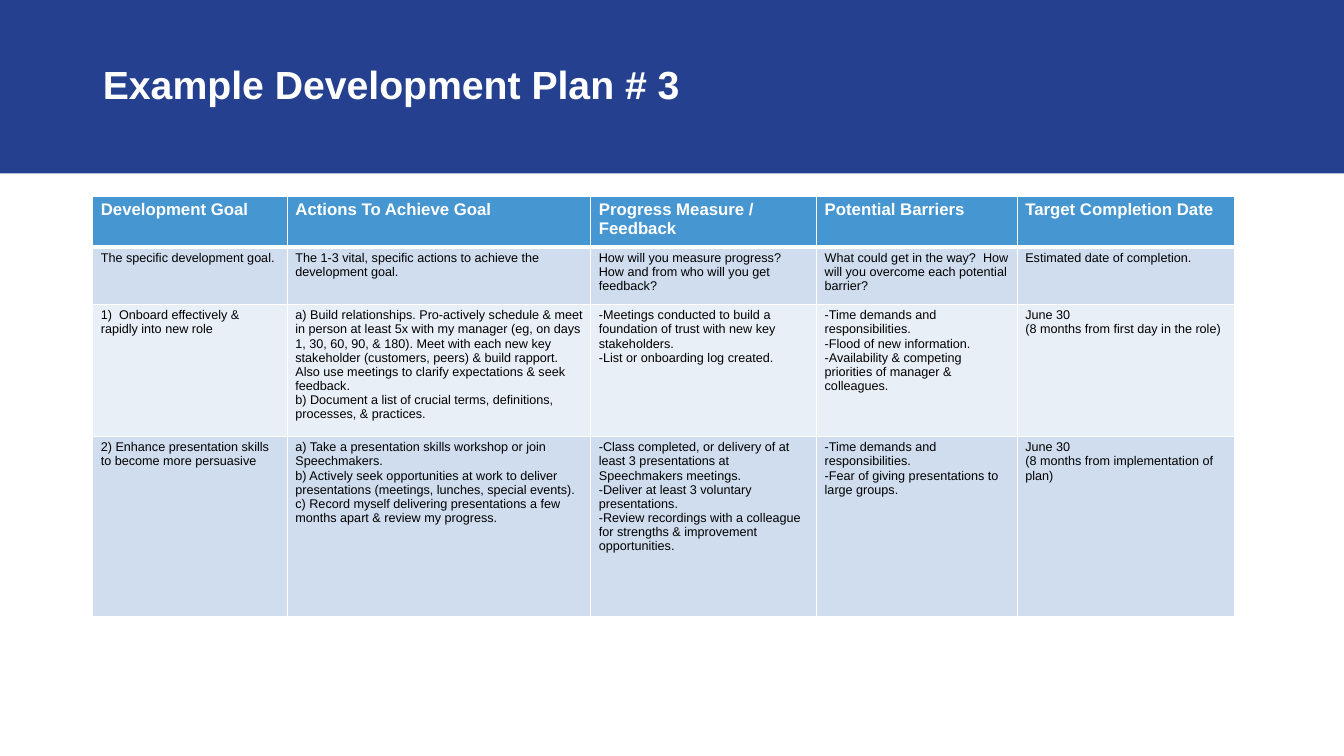
"""Build the slide with an example development plan table."""
from dataclasses import dataclass

from lxml import etree
from pptx import Presentation
from pptx.dml.color import RGBColor
from pptx.enum.shapes import MSO_SHAPE
from pptx.enum.text import MSO_ANCHOR, PP_ALIGN
from pptx.oxml.ns import qn
from pptx.util import Inches, Pt

RECT = MSO_SHAPE.RECTANGLE
MIDDLE = MSO_ANCHOR.MIDDLE
LEFT = PP_ALIGN.LEFT
FONT = "Arial"
WHITE, BLACK, NAVY = "FFFFFF", "000000", "25408F"
HEADER, BAND, PALE = "4696D2", "CFDDEE", "E9EFF7"
COLUMN_WIDTHS = (1.93, 3.01, 2.24, 1.99, 2.16)


@dataclass
class PlanRow:
    height: float
    fill: str
    cells: tuple[str, ...]
    size: float = 9
    color: str = BLACK
    bold: bool = False
    bottom_line: float = 1


PLAN = (
    PlanRow(0.5, HEADER, (
        "Development Goal",
        "Actions To Achieve Goal",
        "Progress Measure / Feedback",
        "Potential Barriers",
        "Target Completion Date",
    ), size=12, color=WHITE, bold=True, bottom_line=3),
    PlanRow(0.57, BAND, (
        "The specific development goal.",
        "The 1-3 vital, specific actions to achieve the development goal.",
        "How will you measure progress? How and from who will you get feedback?",
        "What could get in the way?  How will you overcome each potential barrier?",
        "Estimated date of completion.",
    )),
    PlanRow(1.31, PALE, (
        "1)  Onboard effectively & rapidly into new role",
        "a) Build relationships. Pro-actively schedule & meet in person at least 5x "
        "with my manager (eg, on days 1, 30, 60, 90, & 180). Meet with each new key "
        "stakeholder (customers, peers) & build rapport. Also use meetings to clarify "
        "expectations & seek feedback.\n"
        "b) Document a list of crucial terms, definitions, processes, & practices.",
        "-Meetings conducted to build a foundation of trust with new key stakeholders.\n"
        "-List or onboarding log created.",
        "-Time demands and responsibilities.\n"
        "-Flood of new information.\n"
        "-Availability & competing priorities of manager & colleagues.",
        "June 30\n(8 months from first day in the role)",
    )),
    PlanRow(1.79, BAND, (
        "2) Enhance presentation skills to become more persuasive",
        "a) Take a presentation skills workshop or join Speechmakers.\n"
        "b) Actively seek opportunities at work to deliver presentations "
        "(meetings, lunches, special events).\n"
        "c) Record myself delivering presentations a few months apart & review "
        "my progress.",
        "-Class completed, or delivery of at least 3 presentations at Speechmakers "
        "meetings.\n"
        "-Deliver at least 3 voluntary presentations.\n"
        "-Review recordings with a colleague for strengths & improvement opportunities.",
        "-Time demands and responsibilities.\n"
        "-Fear of giving presentations to large groups.",
        "June 30\n(8 months from implementation of plan)",
    )),
)


def rgb(value: str) -> RGBColor:
    return RGBColor.from_string(value)


def format_text(tf, size: float, color: str, bold: bool) -> None:
    for p in tf.paragraphs:
        p.alignment = LEFT
        for r in p.runs:
            r.font.name = FONT
            r.font.size = Pt(size)
            r.font.bold = bold
            r.font.color.rgb = rgb(color)


def add_borders(cell, bottom: float, top: float) -> None:
    tc_pr = cell._tc.get_or_add_tcPr()
    for side, width in (("L", 1), ("R", 1), ("T", top), ("B", bottom)):
        ln = etree.SubElement(tc_pr, qn(f"a:ln{side}"), w=str(Pt(width)))
        fill = etree.SubElement(ln, qn("a:solidFill"))
        etree.SubElement(fill, qn("a:srgbClr"), val=WHITE)


def add_title(s, text: str) -> None:
    title = s.shapes.title
    title.left, title.top = Inches(0.92), Inches(0.22)
    title.width, title.height = Inches(11.31), Inches(1.28)
    tf = title.text_frame
    tf.text = text
    tf.word_wrap = True
    tf.vertical_anchor = MIDDLE
    tf.paragraphs[0].line_spacing = 0.9
    format_text(tf, 28, WHITE, True)


def add_title_band(s, width: int) -> None:
    band = s.shapes.add_shape(RECT, 0, 0, width, Inches(1.72))
    band.shadow.inherit = False
    band.fill.solid()
    band.fill.fore_color.rgb = rgb(NAVY)
    band.line.fill.background()
    s.shapes.title._element.addprevious(band._element)


def add_plan(s, plan: tuple[PlanRow, ...]) -> None:
    frame = s.shapes.add_table(
        len(plan), len(COLUMN_WIDTHS), Inches(0.92), Inches(1.95),
        Inches(sum(COLUMN_WIDTHS)), Inches(sum(row.height for row in plan)))
    table = frame.table
    for column, width in zip(table.columns, COLUMN_WIDTHS):
        column.width = Inches(width)
    top_line = 1
    for i, row in enumerate(plan):
        table.rows[i].height = Inches(row.height)
        for j, text in enumerate(row.cells):
            cell = table.cell(i, j)
            cell.text_frame.text = text
            cell.margin_left = cell.margin_right = Inches(0.08)
            cell.margin_top = cell.margin_bottom = Inches(0.04)
            format_text(cell.text_frame, row.size, row.color, row.bold)
            add_borders(cell, row.bottom_line, top_line)
            cell.fill.solid()
            cell.fill.fore_color.rgb = rgb(row.fill)
        top_line = row.bottom_line


def main() -> None:
    prs = Presentation()
    prs.slide_width, prs.slide_height = Inches(13.33), Inches(7.5)
    s = prs.slides.add_slide(prs.slide_layouts[5])
    add_title(s, "Example Development Plan # 3")
    add_title_band(s, prs.slide_width)
    add_plan(s, PLAN)
    prs.save("out.pptx")


if __name__ == "__main__":
    main()
